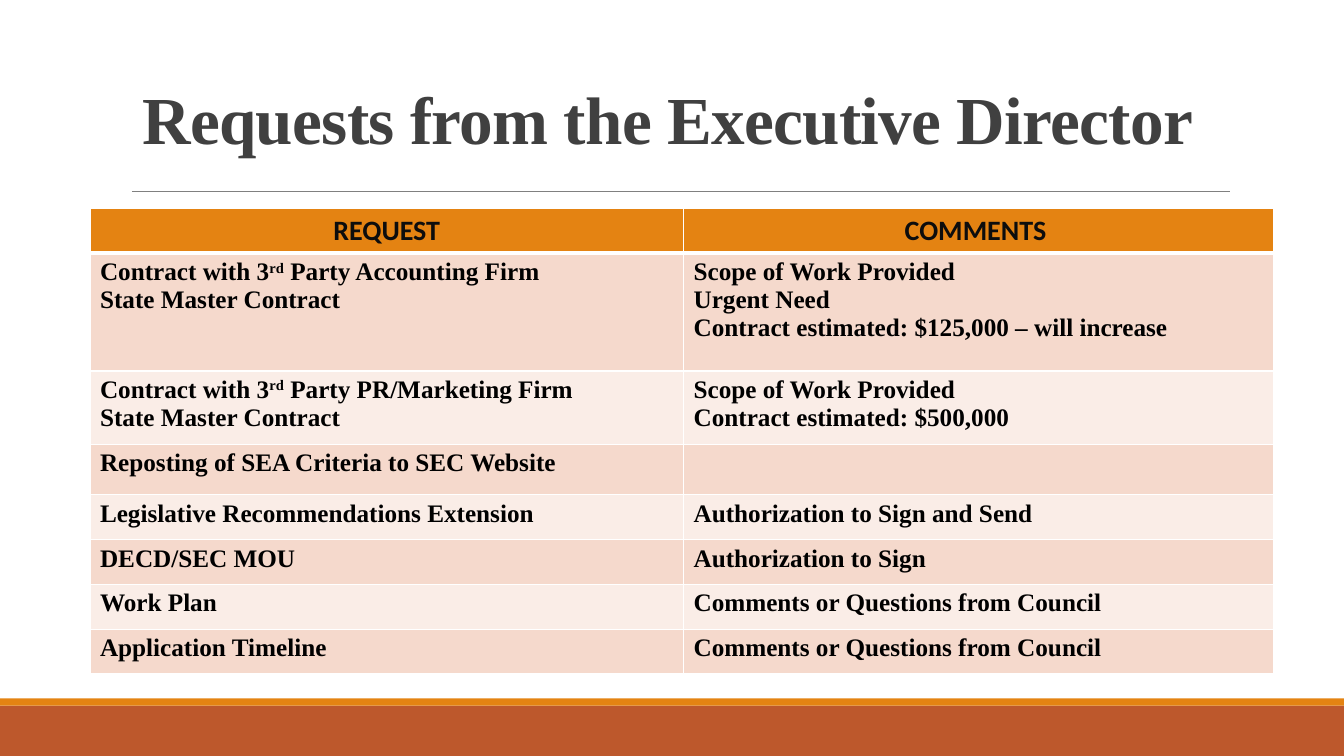
import pptx
import pptx.util
import pptx.dml.color
import pptx.enum.shapes
import pptx.enum.text
import pptx.oxml
import pptx.oxml.ns
import lxml.etree

Pt = pptx.util.Pt
RGB = pptx.dml.color.RGBColor
ALIGN = pptx.enum.text.PP_ALIGN
qn = pptx.oxml.ns.qn

# Content: a cell is a list of lines, a line is a list of runs
TITLE = "Requests from the Executive Director "
HEADS = ["REQUEST", "COMMENTS "]
SUPER = "rd"
STATE = ["State Master Contract"]
SCOPE = ["Scope of Work Provided"]
ASK = [["Comments or Questions from Council"]]
ROWS = [
    ([["Contract with 3", SUPER, " Party Accounting Firm"], STATE],
     [SCOPE, ["Urgent Need"], ["Contract estimated: $125,000 – will increase"]]),
    ([["Contract with 3", SUPER, " Party PR/Marketing Firm"], STATE],
     [SCOPE, ["Contract estimated: $500,000"]]),
    ([["Reposting of SEA Criteria to SEC Website"]], []),
    ([["Legislative Recommendations Extension"]], [["Authorization to Sign and Send"]]),
    ([["DECD/SEC MOU"]], [["Authorization to Sign"]]),
    ([["Work Plan"]], ASK),
    ([["Application Timeline"]], ASK),
]

# Sizes in points
WIDE, HIGH = 960, 540
COLS = [424, 421.75]
TALLS = [32, 84, 52.5, 36, 32, 32, 32, 32]
SERIF, SANS = "Times New Roman", "Calibri"

# Colours
RUST = RGB(0xBD, 0x58, 0x2C)
AMBER = RGB(0xE4, 0x83, 0x12)
BANDS = [RGB(0xF5, 0xD9, 0xCC), RGB(0xFA, 0xED, 0xE7)]
GREY = RGB(0x80, 0x80, 0x80)
DARK = RGB(0x40, 0x40, 0x40)
INK = RGB(0x0D, 0x0D, 0x0D)
BLACK = RGB(0, 0, 0)


def add_run(para, text, size, face, color):
    run = para.add_run()
    run.text = text
    font = run.font
    font.size, font.name, font.bold = Pt(size), face, True
    font.color.rgb = color
    return run


def add_bar(slide, top, tall, color):
    bar = slide.shapes.add_shape(
        pptx.enum.shapes.MSO_SHAPE.RECTANGLE, 0, Pt(top), Pt(WIDE), Pt(tall))
    bar.shadow.inherit = False
    bar.fill.solid()
    bar.fill.fore_color.rgb = color
    bar.line.fill.background()


def style_cell(cell, color, over, under):
    """White edges, then the fill."""
    props = cell._tc.get_or_add_tcPr()
    for side, width in zip("LRTB", (1, 1, over, under)):
        edge = lxml.etree.SubElement(props, qn("a:ln" + side), w=str(Pt(width)))
        fill = lxml.etree.SubElement(edge, qn("a:solidFill"))
        lxml.etree.SubElement(fill, qn("a:srgbClr"), val="FFFFFF")
    cell.fill.solid()
    cell.fill.fore_color.rgb = color


def add_title(slide):
    box = slide.shapes.add_textbox(Pt(86.4), Pt(22.5), Pt(792), Pt(94.3))
    frame = box.text_frame
    frame.word_wrap = True
    frame.vertical_anchor = pptx.enum.text.MSO_ANCHOR.BOTTOM
    para = frame.paragraphs[0]
    para.alignment, para.line_spacing = ALIGN.CENTER, 0.85
    run = add_run(para, TITLE, 48, SERIF, DARK)
    run.font._element.set("spc", "-50")


def add_grid(slide):
    grid = slide.shapes.add_table(
        len(TALLS), len(COLS), Pt(64.25), Pt(149), Pt(sum(COLS)), Pt(sum(TALLS))).table
    for col, width in zip(grid.columns, COLS):
        col.width = Pt(width)
    for row, tall in zip(grid.rows, TALLS):
        row.height = Pt(tall)

    # Header row
    for c, head in enumerate(HEADS):
        cell = grid.cell(0, c)
        style_cell(cell, AMBER, 1, 3)
        para = cell.text_frame.paragraphs[0]
        para.alignment = ALIGN.CENTER
        add_run(para, head, 20, SANS, INK)

    # Banded body rows
    for r, row in enumerate(ROWS, 1):
        for c, lines in enumerate(row):
            cell = grid.cell(r, c)
            style_cell(cell, BANDS[(r - 1) % 2], 3 if r == 1 else 1, 1)
            frame = cell.text_frame
            for n, line in enumerate(lines):
                para = frame.add_paragraph() if n else frame.paragraphs[0]
                for text in line:
                    run = add_run(para, text, 18, SERIF, BLACK)
                    if text == SUPER:
                        run.font._element.set("baseline", "30000")


def main():
    deck = pptx.Presentation()
    deck.slide_width, deck.slide_height = Pt(WIDE), Pt(HIGH)
    slide = deck.slides.add_slide(deck.slide_layouts[6])

    # Footer bars and title rule
    add_bar(slide, 504, 36, RUST)
    add_bar(slide, 498.8, 5.2, AMBER)
    rule = slide.shapes.add_connector(
        pptx.enum.shapes.MSO_CONNECTOR.STRAIGHT, Pt(94.2), Pt(136.8), Pt(878.9), Pt(136.8))
    rule.line.color.rgb = GREY
    rule.line.width = Pt(0.5)
    lxml.etree.SubElement(rule._element.spPr, qn("a:effectLst"))

    add_title(slide)
    add_grid(slide)
    deck.save("out.pptx")


if __name__ == "__main__":
    main()
